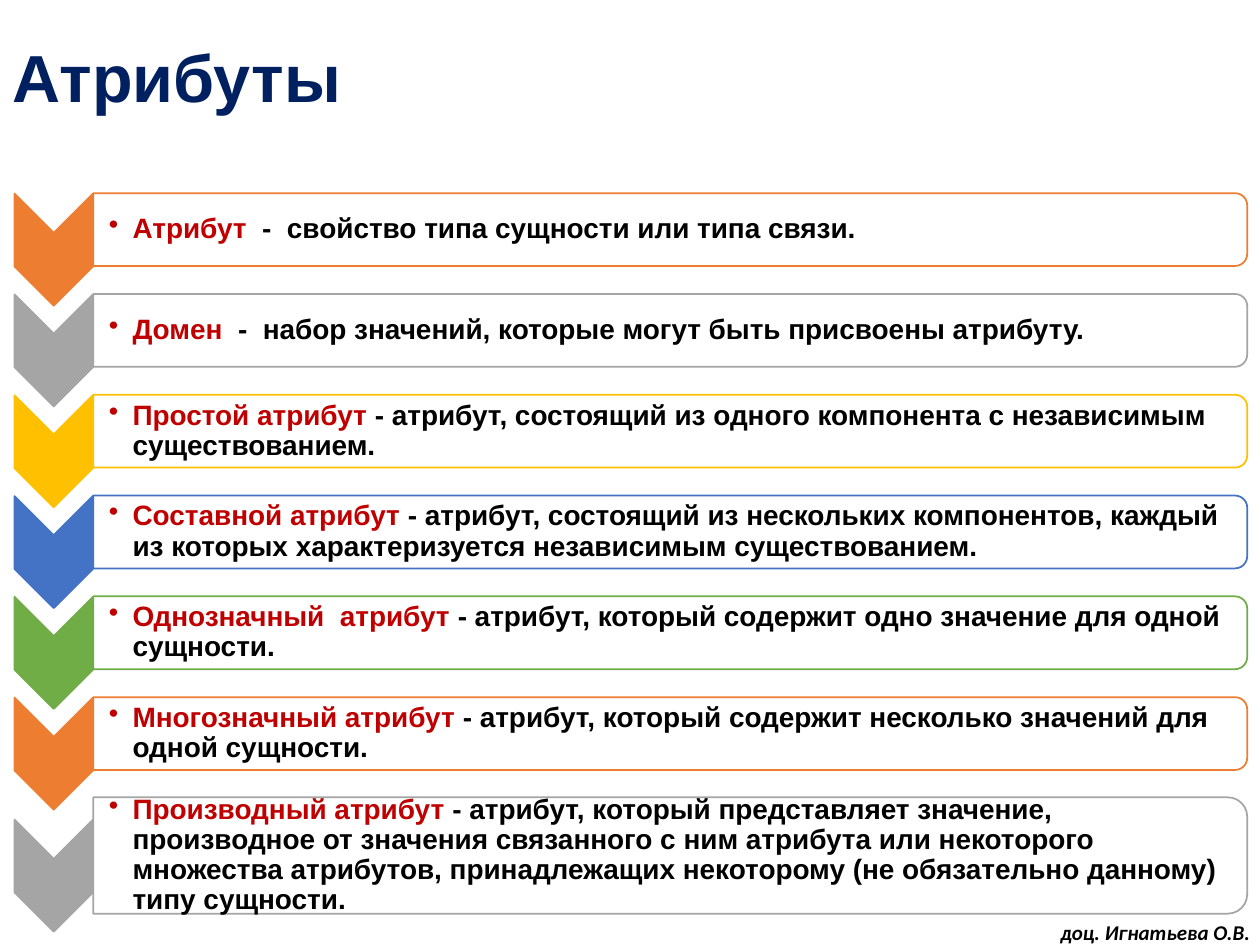
from dataclasses import dataclass

from lxml import etree
from pptx import Presentation
from pptx.dml.color import RGBColor
from pptx.enum import shapes, text
from pptx.oxml import ns
from pptx.util import Pt


@dataclass(frozen=True)
class Theme:
    heading: str = "002060"
    term: str = "C00000"
    body: str = "000000"
    panel: str = "FFFFFF"
    accents: tuple = ("ED7D31", "A5A5A5", "FFC000", "4472C4", "70AD47")
    font: str = "Arial"
    author_font: str = "Calibri"
    title_size: int = 38
    body_size: int = 16
    author_size: int = 12


def apply(target, values):
    for name, value in values.items():
        setattr(target, name, value)


class SlideBuilder:
    def __init__(self, slide, theme):
        self.slide = slide
        self.theme = theme

    def text_box(self, left, top, width, height, runs, line_spacing=1.0,
                 bullet_indent=0, **frame_format):
        """Place one paragraph; runs are (wording, colour, font format)."""
        box = self.slide.shapes.add_textbox(Pt(left), Pt(top), Pt(width), Pt(height))
        frame = box.text_frame
        apply(frame, {"word_wrap": True, **frame_format})
        paragraph = frame.paragraphs[0]
        paragraph.line_spacing = line_spacing
        if bullet_indent:
            self.bullet(paragraph, bullet_indent)
        for wording, colour, font_format in runs:
            run = paragraph.add_run()
            run.text = wording
            apply(run.font, font_format)
            run.font.color.rgb = RGBColor.from_string(colour)

    def bullet(self, paragraph, indent):
        properties = paragraph._p.get_or_add_pPr()
        properties.set("marL", str(Pt(indent)))
        properties.set("indent", str(-Pt(indent)))
        etree.SubElement(properties, ns.qn("a:buChar")).set("char", "•")

    def turned_shape(self, preset, centre_x, centre_y, width, height, fill, line,
                     opacity=100):
        """Place a shape turned by 90 degrees; width and height are as seen."""
        shape = self.slide.shapes.add_shape(
            preset, Pt(centre_x - height / 2), Pt(centre_y - width / 2),
            Pt(height), Pt(width))
        shape.rotation = 90
        shape.shadow.inherit = False
        shape.fill.solid()
        shape.fill.fore_color.rgb = RGBColor.from_string(fill)
        shape.line.color.rgb = RGBColor.from_string(line)
        shape.line.width = Pt(1)
        if opacity < 100:
            colour = shape.fill._xPr.find(ns.qn("a:solidFill"))[0]
            etree.SubElement(colour, ns.qn("a:alpha")).set("val", str(opacity * 1000))

    def definition(self, centre_y, height, accent, term, meaning):
        """Chevron, rounded panel and the bulleted definition on it."""
        theme = self.theme
        self.turned_shape(shapes.MSO_SHAPE.CHEVRON, CHEVRON_X, centre_y + CHEVRON_DROP,
                          CHEVRON_WIDTH, CHEVRON_HEIGHT, accent, accent)
        self.turned_shape(shapes.MSO_SHAPE.ROUND_2_SAME_RECTANGLE,
                          PANEL_LEFT + PANEL_WIDTH / 2, centre_y,
                          PANEL_WIDTH, height, theme.panel, accent, opacity=90)
        font = {"name": theme.font, "size": Pt(theme.body_size), "bold": True}
        text_height = height * 0.9
        self.text_box(PANEL_LEFT, centre_y - text_height / 2, PANEL_WIDTH - 2, text_height,
                      [(term, theme.term, font), (meaning, theme.body, font)],
                      line_spacing=0.9, bullet_indent=13.5,
                      vertical_anchor=text.MSO_ANCHOR.MIDDLE,
                      margin_left=Pt(9), margin_right=Pt(0.8),
                      margin_top=Pt(0.8), margin_bottom=Pt(0.8))


# Layout in points
CHEVRON_X, CHEVRON_DROP = 30.7, 11.5
CHEVRON_WIDTH, CHEVRON_HEIGHT = 44.8, 64
PANEL_LEFT, PANEL_WIDTH = 53.3, 659.4
FIRST_ROW, ROW_PITCH, ROW_HEIGHT = 131.2, 57.6, 41.6
LAST_ROW, LAST_HEIGHT = 488.9, 66.5

DEFINITIONS = [
    ("Атрибут", "  -  свойство типа сущности или типа связи."),
    ("Домен", "  -  набор значений, которые могут быть присвоены атрибуту."),
    ("Простой атрибут ",
     "- атрибут, состоящий из одного компонента с независимым существованием."),
    ("Составной атрибут ",
     "- атрибут, состоящий из нескольких компонентов, каждый из которых "
     "характеризуется независимым существованием."),
    ("Однозначный  атрибут ",
     "- атрибут, который содержит одно значение для одной сущности."),
    ("Многозначный атрибут ",
     "- атрибут, который содержит несколько значений для одной сущности."),
    ("Производный атрибут ",
     "- атрибут, который представляет значение, производное от значения связанного "
     "с ним атрибута или некоторого множества атрибутов, принадлежащих некоторому "
     "(не обязательно данному) типу сущности."),
]


def main():
    deck = Presentation()
    apply(deck, {"slide_width": Pt(720), "slide_height": Pt(540)})
    theme = Theme()
    builder = SlideBuilder(deck.slides.add_slide(deck.slide_layouts[6]), theme)

    # Heading
    heading_font = {"name": theme.font, "size": Pt(theme.title_size), "bold": True}
    builder.text_box(0, 8, 720, 77, [("Атрибуты", theme.heading, heading_font)],
                     line_spacing=0.9, vertical_anchor=text.MSO_ANCHOR.MIDDLE)

    # Author
    author_font = {"name": theme.author_font, "size": Pt(theme.author_size),
                   "bold": True, "italic": True}
    builder.text_box(599, 522, 124.6, 21.6,
                     [("доц. Игнатьева О.В.", theme.body, author_font)], word_wrap=False)

    # Definitions: equal rows, then a taller last one
    last = len(DEFINITIONS) - 1
    for row, (term, meaning) in enumerate(DEFINITIONS):
        centre_y, height = FIRST_ROW + row * ROW_PITCH, ROW_HEIGHT
        if row == last:
            centre_y, height = LAST_ROW, LAST_HEIGHT
        accent = theme.accents[row % len(theme.accents)]
        builder.definition(centre_y, height, accent, term, meaning)

    deck.save("out.pptx")


if __name__ == "__main__":
    main()
